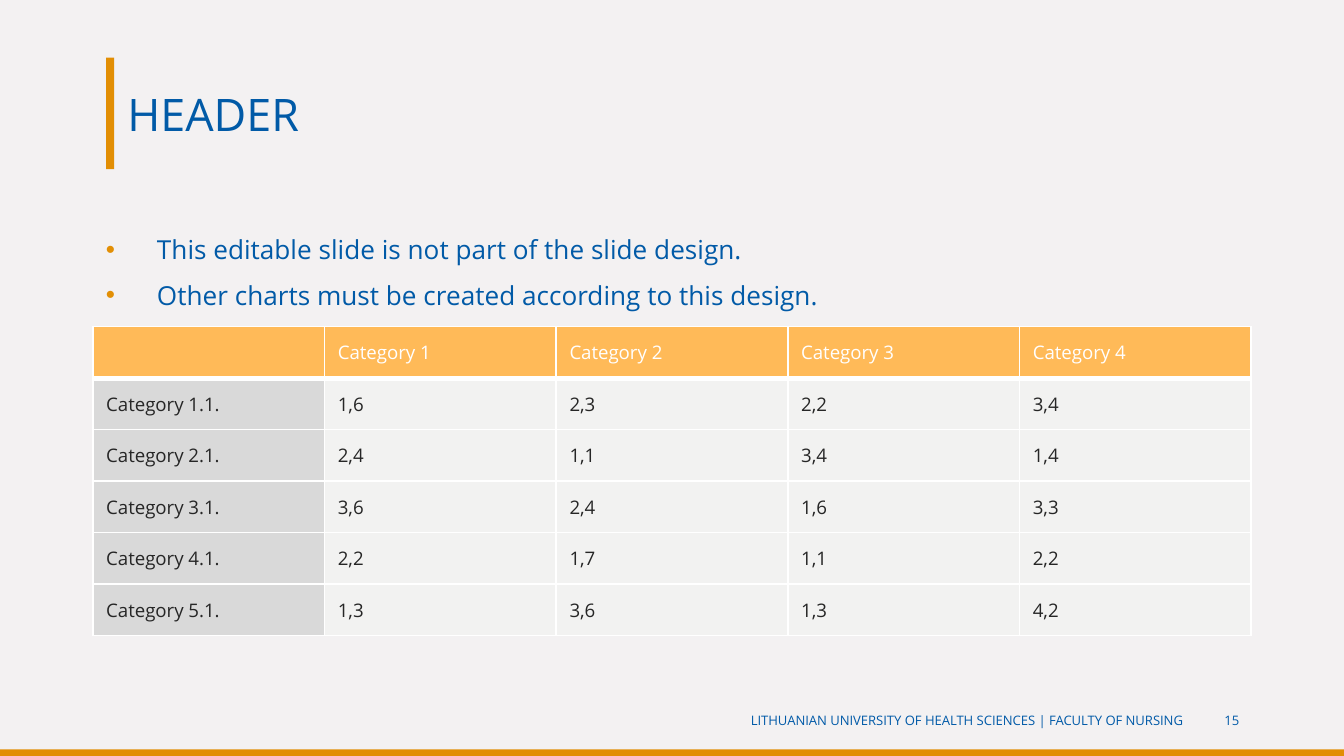
import pptx
import pptx.dml.color
import pptx.enum.shapes
import pptx.enum.text
import pptx.oxml.ns
import pptx.util
from lxml import etree

Inches = pptx.util.Inches
Pt = pptx.util.Pt
ALIGN = pptx.enum.text.PP_ALIGN
ANCHOR = pptx.enum.text.MSO_ANCHOR
qn = pptx.oxml.ns.qn

FONT = "Open Sans"
WIDTH = 10
HEIGHT = WIDTH * 9 / 16
COLORS = {
    "background": "F3F1F2",
    "accent": "E28E04",
    "bullet": "E28F05",
    "heading": "015AA7",
    "footer": "015AA8",
    "header_fill": "FFBA58",
    "label_fill": "D9D9D9",
    "value_fill": "F2F2F1",
    "cell_text": "262626",
    "white": "FFFFFF",
}

PANELS = [
    ("background", (0, 0, WIDTH, HEIGHT)),
    ("accent", (0, HEIGHT - 0.05, WIDTH, 0.05)),
    ("accent", (0.79, 0.43, 0.06, 0.83)),
]
BULLETS = [
    "This editable slide is not part of the slide design.",
    "Other charts must be created according to this design.",
]
FOOTER = {"size": 7, "color": "footer", "align": ALIGN.RIGHT}
TEXTS = [
    (["HEADER"], (0.85, 0.43, 8.46, 0.83), {"size": 24, "color": "heading"}),
    (BULLETS, (0.69, 1.69, 8.63, 0.68),
     {"size": 14, "color": "heading", "anchor": ANCHOR.TOP, "bullet": True}),
    (["LITHUANIAN UNIVERSITY OF HEALTH SCIENCES | FACULTY OF NURSING"],
     (1.68, 5.21, 7.22, 0.3), FOOTER),
    (["15"], (8.96, 5.21, 0.36, 0.3), FOOTER),
]
TABLE_AREA = (0.69, 2.43, 8.62, 2.3)
TABLE = [
    ["", "Category 1", "Category 2", "Category 3", "Category 4"],
    ["Category 1.1.", "1,6", "2,3", "2,2", "3,4"],
    ["Category 2.1.", "2,4", "1,1", "3,4", "1,4"],
    ["Category 3.1.", "3,6", "2,4", "1,6", "3,3"],
    ["Category 4.1.", "2,2", "1,7", "1,1", "2,2"],
    ["Category 5.1.", "1,3", "3,6", "1,3", "4,2"],
]


def rgb(name):
    return pptx.dml.color.RGBColor.from_string(COLORS[name])


def inches(area):
    return [Inches(length) for length in area]


def set_font(font, size, color):
    for name, value in {"name": FONT, "size": Pt(size)}.items():
        setattr(font, name, value)
    font.color.rgb = rgb(color)


def add_color(parent, color):
    etree.SubElement(parent, qn("a:srgbClr"), val=COLORS[color])


def add_bullet(para):
    properties = para._p.get_or_add_pPr()
    indent = Inches(0.38)
    properties.set("marL", str(indent))
    properties.set("indent", str(-indent))
    add_color(etree.SubElement(properties, qn("a:buClr")), "bullet")
    etree.SubElement(properties, qn("a:buFont"), typeface="Arial")
    etree.SubElement(properties, qn("a:buChar"), char="•")


def add_panel(page, color, area):
    panel = page.shapes.add_shape(
        pptx.enum.shapes.MSO_SHAPE.RECTANGLE, *inches(area))
    panel.shadow.inherit = False
    panel.fill.solid()
    panel.fill.fore_color.rgb = rgb(color)
    panel.line.fill.background()


def add_text(page, lines, area, style):
    frame = page.shapes.add_textbox(*inches(area)).text_frame
    frame.word_wrap = True
    frame.vertical_anchor = style.get("anchor", ANCHOR.MIDDLE)
    for index, line in enumerate(lines):
        para = frame.add_paragraph() if index else frame.paragraphs[0]
        para.alignment = style.get("align", ALIGN.LEFT)
        if index:
            para.space_before = Pt(7.5)
        if style.get("bullet"):
            add_bullet(para)
        span = para.add_run()
        span.text = line
        set_font(span.font, style["size"], style["color"])


def add_borders(cell, row):
    """White lines, with a thick one under the header row."""
    widths = {"L": 1, "R": 1, "T": 3 if row == 1 else 1, "B": 3 if row == 0 else 1}
    properties = cell._tc.get_or_add_tcPr()
    for side, width in widths.items():
        line = etree.SubElement(properties, qn("a:ln" + side), w=str(Pt(width)))
        add_color(etree.SubElement(line, qn("a:solidFill")), "white")


def fill_cell(cell, text, row, column):
    add_borders(cell, row)
    fill = "header_fill" if row == 0 else "value_fill" if column else "label_fill"
    cell.fill.solid()
    cell.fill.fore_color.rgb = rgb(fill)
    cell.vertical_anchor = ANCHOR.MIDDLE
    para = cell.text_frame.paragraphs[0]
    if text:
        span = para.add_run()
        span.text = text
        set_font(span.font, 10, "cell_text" if row else "white")
    else:
        # A small end mark keeps the empty cell from stretching its row.
        etree.SubElement(para._p, qn("a:endParaRPr"), sz="1000")


def add_data_table(page):
    rows, columns = len(TABLE), len(TABLE[0])
    table = page.shapes.add_table(rows, columns, *inches(TABLE_AREA)).table
    for column in table.columns:
        column.width = Inches(TABLE_AREA[2] / columns)
    for row in table.rows:
        row.height = Inches(TABLE_AREA[3] / rows)
    for row, values in enumerate(TABLE):
        for column, text in enumerate(values):
            fill_cell(table.cell(row, column), text, row, column)


def main():
    deck = pptx.Presentation()
    deck.slide_width, deck.slide_height = Inches(WIDTH), Inches(HEIGHT)
    page = deck.slides.add_slide(deck.slide_layouts[6])
    for color, area in PANELS:
        add_panel(page, color, area)
    for lines, area, style in TEXTS:
        add_text(page, lines, area, style)
    add_data_table(page)
    deck.save("out.pptx")


if __name__ == "__main__":
    main()
